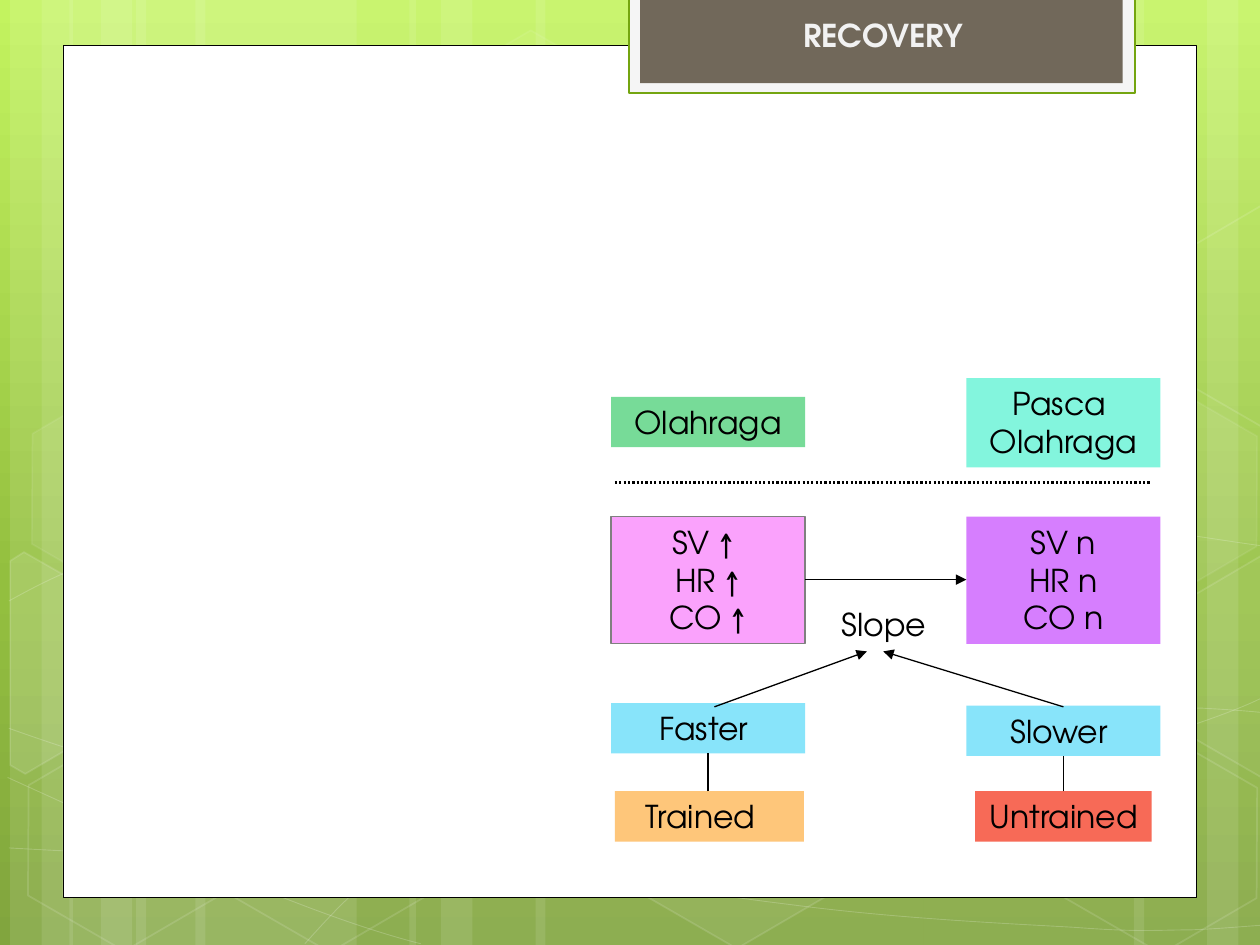
from copy import deepcopy
from math import cos, radians, sin

from lxml import etree
from pptx import Presentation
from pptx.dml.color import RGBColor
from pptx.enum import dml, shapes as sh, text as tx
from pptx.oxml.ns import qn
from pptx.util import Inches, Pt

FONT = "TeX Gyre Adventor"
rgb = RGBColor.from_string


def fade(part, pct):
    """Set the opacity of a solid fill, given its parent element."""
    color = part.find(qn("a:solidFill")).find(qn("a:srgbClr"))
    etree.SubElement(color, qn("a:alpha")).set("val", str(pct * 1000))


def paint(shape, fill=None, line=None, width=0.75, alpha=100, glow=100):
    """Give a shape its fill and outline, with their opacity."""
    shape.shadow.inherit = False
    if fill:
        shape.fill.solid()
        shape.fill.fore_color.rgb = rgb(fill)
        if alpha < 100:
            fade(shape.element.spPr, alpha)
    else:
        shape.fill.background()
    if line:
        shape.line.color.rgb = rgb(line)
        shape.line.width = Pt(width)
        if glow < 100:
            fade(shape.element.spPr.find(qn("a:ln")), glow)
    else:
        shape.line.fill.background()
    return shape


def block(slide, box, kind=sh.MSO_SHAPE.RECTANGLE, **look):
    return paint(slide.shapes.add_shape(kind, *map(Inches, box)), **look)


def write(shape, words, color="000000", bold=False, pad=0.1):
    """Fill a shape with centred lines of text."""
    frame = shape.text_frame
    frame.word_wrap = True
    frame.vertical_anchor = tx.MSO_ANCHOR.TOP
    frame.margin_right = Inches(pad)
    frame.text = words
    for para in frame.paragraphs:
        para.alignment = tx.PP_ALIGN.CENTER
        font = para.runs[0].font
        font.name, font.size, font.bold = FONT, Pt(18), bold
        font.color.rgb = rgb(color)


def link(slide, start, end, width=0.75, arrow=False, dots=False):
    line = slide.shapes.add_connector(
        sh.MSO_CONNECTOR.STRAIGHT, *map(Inches, start + end))
    line.line.color.rgb = rgb("000000")
    line.line.width = Pt(width)
    if dots:
        line.line.dash_style = dml.MSO_LINE.ROUND_DOT
    if arrow:
        tail = etree.SubElement(line.element.spPr.find(qn("a:ln")), qn("a:tailEnd"))
        tail.set("type", "triangle")
    etree.SubElement(line.element.spPr, qn("a:effectLst"))


def trace(slide, points, close=False, **look):
    dots = [(Inches(x), Inches(y)) for x, y in points]
    pen = slide.shapes.build_freeform(*dots[0])
    pen.add_line_segments(dots[1:], close=close)
    return paint(pen.convert_to_shape(), line="FFFFFF", **look)


def bend(shape):
    """Turn each three straight segments into one cubic curve."""
    segs = list(shape.element.iter(qn("a:lnTo")))
    for i in range(0, len(segs), 3):
        cubic = etree.Element(qn("a:cubicBezTo"))
        segs[i].addprevious(cubic)
        for seg in segs[i:i + 3]:
            cubic.append(seg[0])
            seg.getparent().remove(seg)


def turn(points, mid, angle):
    """Rotate points about a centre, clockwise on the slide."""
    c, s = cos(radians(angle)), sin(radians(angle))
    return [(mid[0] + (x - mid[0]) * c - (y - mid[1]) * s,
             mid[1] + (x - mid[0]) * s + (y - mid[1]) * c) for x, y in points]


def backdrop(slide, wide, high):
    # Green gradient
    fill = slide.background.fill
    fill.gradient()
    stops = slide.element.find(".//" + qn("a:gsLst"))
    stops.insert(1, deepcopy(stops[0]))
    fill.gradient_angle = 270
    tones = ((0, "C3F35F"), (0.62, "93BF3F"), (1, "81A53E"))
    for stop, (place, tone) in zip(fill.gradient_stops, tones):
        stop.position, stop.color.rgb = place, rgb(tone)

    # Pale upright bands
    bands = ((1.08, 1.75), (0.08, 0.5), (0.33, 0.83), (1.55, 1.75),
             (0.55, 0.5), (0.8, 0.83), (7.33, 1.75), (9.58, 0.5),
             (9, 0.83), (4.25, 3.08), (3.25, 0.5), (3.5, 0.83))
    for left, span in bands:
        block(slide, (left, 0, span, high), fill="FFFFFF", alpha=10)

    # Thin sweeping curves: a start, then three knots for each bend
    sweeps = (
        [(0.07, 6.73), (0.61, 6.76), (1.15, 6.79), (1.9, 6.78), (2.65, 6.77),
         (3.58, 6.75), (4.58, 6.65), (5.58, 6.55), (7, 6.36), (7.92, 6.17),
         (8.83, 5.98), (9.77, 5.68), (10.07, 5.51)],
        [(0.07, 4.77), (0.36, 4.61), (0.65, 4.46), (1.21, 4.31), (1.78, 4.16),
         (2.59, 3.94), (3.47, 3.87), (4.36, 3.8), (5.44, 3.79), (6.54, 3.87),
         (7.64, 3.95), (9.47, 4.26), (10.07, 4.34)],
        [(0.06, 6.17), (1.27, 6.72), (2.47, 7.27), (3.34, 7.49)],
        [(0.07, 5.78), (0.38, 5.89), (0.7, 6), (1.28, 6.16), (1.86, 6.31),
         (2.73, 6.56), (3.57, 6.73), (4.4, 6.9), (5.45, 7.08), (6.28, 7.18),
         (7.11, 7.29), (8, 7.33), (8.53, 7.36), (9.05, 7.4), (9.19, 7.38),
         (9.45, 7.38), (9.71, 7.37), (9.89, 7.35), (10.07, 7.34)],
        [(2.42, 7.49), (2.6, 7.29), (2.78, 7.09), (3.02, 6.91), (3.26, 6.73),
         (3.6, 6.53), (3.88, 6.39), (4.16, 6.25), (4.33, 6.19), (4.7, 6.09),
         (5.06, 5.99), (5.73, 5.85), (6.08, 5.78), (6.44, 5.71), (6.49, 5.71),
         (6.8, 5.69), (7.11, 5.66), (7.6, 5.63), (7.94, 5.62), (8.29, 5.61),
         (8.86, 5.62), (8.86, 5.62), (9.08, 5.62), (9.31, 5.62), (9.53, 5.62),
         (9.71, 5.63), (9.88, 5.64), (10.06, 5.66)])
    for knots in sweeps:
        bend(trace(slide, knots, width=0.5, glow=20))

    # Hexagons: left, top, fill opacity, line opacity
    cells = ((3.34, 0.36, 4, 8), (4.97, 5.89, 6, 12), (0.11, 5.91, 0, 12),
             (0.14, 3.12, 7, 8), (1.74, 5.92, 0, 12), (7.53, 4.53, 10, 12),
             (8.34, 5.93, 0, 12), (8.34, 3.14, 7, 8))
    for left, top, alpha, glow in cells:
        cell = block(slide, (left, top, 1.75, 1.52), sh.MSO_SHAPE.HEXAGON,
                     fill="FFFFFF" if alpha else None, alpha=alpha,
                     line="FFFFFF", width=1, glow=glow)
        cell.adjustments[0] = 0.285
        cell.rotation = 30

    # Hexagons cut by the slide edges: outline, centre, fill opacity
    west = [(0.08, 4.45), (0.19, 4.38), (0.96, 4.82), (0.95, 5.7),
            (0.2, 6.14), (0.08, 6.07)]
    east = [(9.26, 4.85), (10.01, 4.41), (10.09, 4.46), (10.09, 6.13),
            (10.02, 6.17), (9.26, 5.73)]
    upper = [(x, y - 2.78) for x, y in east]
    for edge, mid, alpha in ((west, (0.36, 5.35), 10), (east, (9.85, 5.2), 4),
                             (upper, (9.85, 2.41), 0)):
        cut = trace(slide, turn(edge, mid, -30), close=True, alpha=alpha,
                    fill="FFFFFF" if alpha else None, width=1, glow=12)
        cut.rotation = 30

    # White page
    block(slide, (0.5, 0.36, wide - 1, 6.76), fill="FFFFFF", line="000000", width=0.5)


def banner(slide, left, top, wide, high):
    block(slide, (left, top, wide, high), fill="F5F5F5", line="74A510", width=1.25)
    block(slide, (left + 0.09, top, wide - 0.19, high - 0.08), fill="71685A")
    title = slide.shapes.add_textbox(*map(Inches, (left + 0.22, top + 0.1, 3.67, 0.4)))
    write(title, "RECOVERY ", color="F2F2F2", bold=True)


def chart(slide, left, top, wide, high):
    span, row = 1.54, 0.4
    right, base = left + wide - span, top + high - row
    mid, far = left + span / 2, right + span / 2

    # Boxes: left, top, width, height, fill, words
    for *box, fill, words in (
            (right + 0.07, base, 1.4, row, "F76A57", "Untrained "),
            (left + 0.03, base, 1.5, row, "FEC67A", "Trained "),
            (right, top + 2.6, span, row, "88E4FA", "Slower "),
            (left, top + 0.15, span, row, "77DB98", "Olahraga"),
            (right, top, span, 0.71, "83F5DD", "Pasca \nOlahraga"),
            (right, top + 1.1, span, 1.01, "D67EFE", "SV n\nHR n\nCO n"),
            (left, top + 1.1, span, 1.01, "FAA2FC", "SV ↑ \nHR ↑\nCO ↑"),
            (left, top + 2.58, span, row, "88E4FA", "Faster ")):
        write(block(slide, box, fill=fill, line="808080" if "↑" in words else None),
              words, pad=0.17 if words == "Trained " else 0.1)
    slope = slide.shapes.add_textbox(*map(Inches, (left + 1.71, top + 1.75, 0.91, row)))
    write(slope, "Slope ")

    # Arrows and lines
    link(slide, (left + span, top + 1.6), (right, top + 1.6), arrow=True)
    link(slide, (mid, base), (mid, top + 2.98))
    link(slide, (far, base), (far, top + 3))
    link(slide, (mid + 0.05, top + 2.61), (left + 2.03, top + 2.17), arrow=True)
    link(slide, (far, top + 2.61), (left + 2.16, top + 2.17), arrow=True)
    link(slide, (left + 0.03, top + 0.83), (left + 4.29, top + 0.83), 1.25, dots=True)


deck = Presentation()
deck.slide_width, deck.slide_height = Inches(10), Inches(7.5)
page = deck.slides.add_slide(deck.slide_layouts[6])
backdrop(page, 10, 7.5)
banner(page, 4.99, -0.02, 4.02, 0.76)
chart(page, 4.85, 3, 4.36, 3.68)
deck.save("out.pptx")
